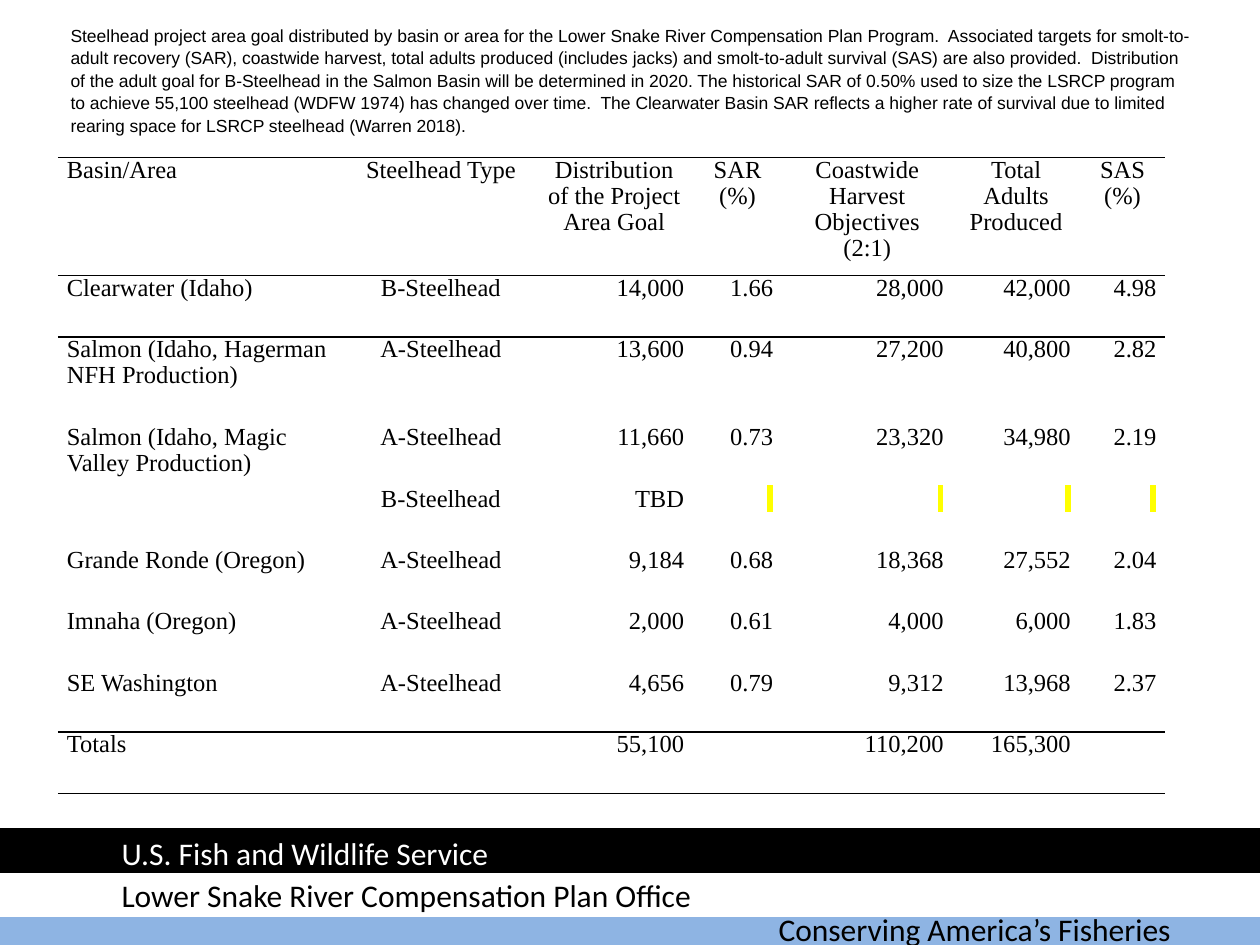
from dataclasses import dataclass

from lxml import etree
from pptx import Presentation
from pptx.dml.color import RGBColor
from pptx.enum.shapes import MSO_SHAPE
from pptx.enum.text import MSO_ANCHOR, MSO_AUTO_SIZE, PP_ALIGN
from pptx.oxml.ns import qn
from pptx.util import Pt

RECTANGLE = MSO_SHAPE.RECTANGLE
LEFT, CENTER, RIGHT = PP_ALIGN.LEFT, PP_ALIGN.CENTER, PP_ALIGN.RIGHT
MIDDLE = MSO_ANCHOR.MIDDLE
FIT_SHAPE = MSO_AUTO_SIZE.SHAPE_TO_FIT_TEXT
TITLE_ONLY = 5
NO_TABLE_STYLE = "{2D5ABB26-0587-4C30-8999-92F81FD0307C}"
MARK = chr(160)  # a no-break space carries the yellow mark


@dataclass(frozen=True)
class Theme:
    black: str = "000000"
    white: str = "FFFFFF"
    blue: str = "8EB4E3"
    yellow: str = "FFFF00"
    caption_font: str = "Arial"
    table_font: str = "Times New Roman"
    footer_font: str = "Calibri"
    caption_size: float = 10
    table_size: float = 14
    footer_size: float = 18
    caption_spacing: float = 1.07
    table_spacing: float = 0.96
    cell_inset: float = 5.1
    rule_width: float = 1


CAPTION = (
    "Steelhead project area goal distributed by basin or area for the Lower Snake River "
    "Compensation Plan Program.  Associated targets for smolt-to-adult recovery (SAR), "
    "coastwide harvest, total adults produced (includes jacks) and smolt-to-adult survival "
    "(SAS) are also provided.  Distribution of the adult goal for B-Steelhead in the Salmon "
    "Basin will be determined in 2020. The historical SAR of 0.50% used to size the LSRCP "
    "program to achieve 55,100 steelhead (WDFW 1974) has changed over time.  The Clearwater "
    "Basin SAR reflects a higher rate of survival due to limited rearing space for LSRCP "
    "steelhead (Warren 2018)."
)
GOALS = [
    ["Basin/Area", "Steelhead Type", "Distribution of the Project Area Goal", "SAR (%)",
     "Coastwide Harvest Objectives (2:1)", "Total Adults Produced", "SAS (%)"],
    ["Clearwater (Idaho)", "B-Steelhead", "14,000", "1.66", "28,000", "42,000", "4.98"],
    ["Salmon (Idaho, Hagerman NFH Production)", "A-Steelhead",
     "13,600", "0.94", "27,200", "40,800", "2.82"],
    ["Salmon (Idaho, Magic Valley Production)", "A-Steelhead",
     "11,660", "0.73", "23,320", "34,980", "2.19"],
    ["", "B-Steelhead", "TBD", MARK, MARK, MARK, MARK],
    ["Grande Ronde (Oregon)", "A-Steelhead", "9,184", "0.68", "18,368", "27,552", "2.04"],
    ["Imnaha (Oregon)", "A-Steelhead", "2,000", "0.61", "4,000", "6,000", "1.83"],
    ["SE Washington", "A-Steelhead", "4,656", "0.79", "9,312", "13,968", "2.37"],
    ["Totals", "", "55,100", "", "110,200", "165,300", ""],
]
COLUMN_WIDTHS = [164.9, 108, 90, 50.9, 97.4, 72.7, 49]
ROW_HEIGHTS = [67.4, 35.1, 50.3] + [35.1] * 6
RULED_EDGES = {0, 1, len(GOALS) - 1, len(GOALS)}


def write_text(frame, text, *, font, size, color, align=LEFT, spacing=None, highlight=None):
    """Fill the first paragraph of a text frame with one formatted span."""
    para = frame.paragraphs[0]
    para.alignment = align
    para.line_spacing = spacing
    span = para.add_run()
    span.text = text
    span.font.size = Pt(size)
    span.font.bold = False
    span.font.color.rgb = RGBColor.from_string(color)
    if highlight:
        mark = etree.SubElement(span.font._element, qn("a:highlight"))
        etree.SubElement(mark, qn("a:srgbClr"), val=highlight)
    span.font.name = font


class PageBuilder:
    def __init__(self, page, theme):
        self.page = page
        self.theme = theme

    def caption(self, text, left, top, width, height):
        theme = self.theme
        box = self.page.shapes.title
        box.left, box.top, box.width, box.height = map(Pt, (left, top, width, height))
        frame = box.text_frame
        frame.word_wrap = True
        frame.auto_size = FIT_SHAPE
        frame.vertical_anchor = MIDDLE
        write_text(frame, text, font=theme.caption_font, size=theme.caption_size,
                   color=theme.black, spacing=theme.caption_spacing)

    def band(self, color, left, top, width, height):
        band = self.page.shapes.add_shape(RECTANGLE, *map(Pt, (left, top, width, height)))
        band.shadow.inherit = False
        band.fill.solid()
        band.fill.fore_color.rgb = RGBColor.from_string(color)
        band.line.color.rgb = RGBColor.from_string(color)
        band.line.width = Pt(2)

    def footer_text(self, text, color, left, top, width, height):
        theme = self.theme
        box = self.page.shapes.add_textbox(*map(Pt, (left, top, width, height)))
        box.text_frame.word_wrap = True
        box.text_frame.auto_size = FIT_SHAPE
        write_text(box.text_frame, text, font=theme.footer_font,
                   size=theme.footer_size, color=color)

    def table(self, rows, left, top, widths, heights, ruled_edges):
        """Add a plain table with rules on the numbered row edges, counted from the top."""
        frame = self.page.shapes.add_table(
            len(rows), len(widths), *map(Pt, (left, top, sum(widths), sum(heights))))
        table = frame.table
        table.first_row = table.horz_banding = False
        table._tbl.tblPr.find(qn("a:tableStyleId")).text = NO_TABLE_STYLE
        for column, width in zip(table.columns, widths):
            column.width = Pt(width)
        for row_index, (row, height) in enumerate(zip(rows, heights)):
            table.rows[row_index].height = Pt(height)
            sides = [side for side, edge in (("a:lnT", row_index), ("a:lnB", row_index + 1))
                     if edge in ruled_edges]
            for column_index, text in enumerate(row):
                number_align = CENTER if row_index == 0 else RIGHT
                align = (LEFT, CENTER)[column_index] if column_index < 2 else number_align
                self.cell(table.cell(row_index, column_index), text, align, sides)

    def cell(self, cell, text, align, sides):
        theme = self.theme
        cell.margin_left = cell.margin_right = Pt(theme.cell_inset)
        cell.margin_top = cell.margin_bottom = 0
        for side in sides:
            rule = etree.SubElement(cell._tc.get_or_add_tcPr(), qn(side),
                                    w=str(Pt(theme.rule_width)))
            fill = etree.SubElement(rule, qn("a:solidFill"))
            etree.SubElement(fill, qn("a:srgbClr"), val=theme.black)
        cell.fill.background()
        if text:
            write_text(cell.text_frame, text, font=theme.table_font, size=theme.table_size,
                       color=theme.black, align=align, spacing=theme.table_spacing,
                       highlight=theme.yellow if text == MARK else None)


def main():
    deck = Presentation()
    deck.slide_width, deck.slide_height = Pt(720), Pt(540)
    theme = Theme()
    builder = PageBuilder(deck.slides.add_slide(deck.slide_layouts[TITLE_ONLY]), theme)

    for color, left, top in ((theme.blue, -0.7, 516.2), (theme.white, 0, 499),
                             (theme.black, 0, 474)):
        builder.band(color, left, top, 720, 23.8)
    for text, color, left, top, width in (
        ("Conserving America’s Fisheries", theme.black, 437.8, 516.2, 264.2),
        ("U.S. Fish and Wildlife Service", theme.white, 62.4, 473.2, 299.5),
        ("Lower Snake River Compensation Plan Office", theme.black, 62.4, 496.8, 357.8),
    ):
        builder.footer_text(text, color, left, top, width, 29)

    builder.table(GOALS, 33.1, 90, COLUMN_WIDTHS, ROW_HEIGHTS, RULED_EDGES)
    builder.caption(CAPTION, 33.1, 11.5, 653.8, 67.7)
    deck.save("out.pptx")


if __name__ == "__main__":
    main()
